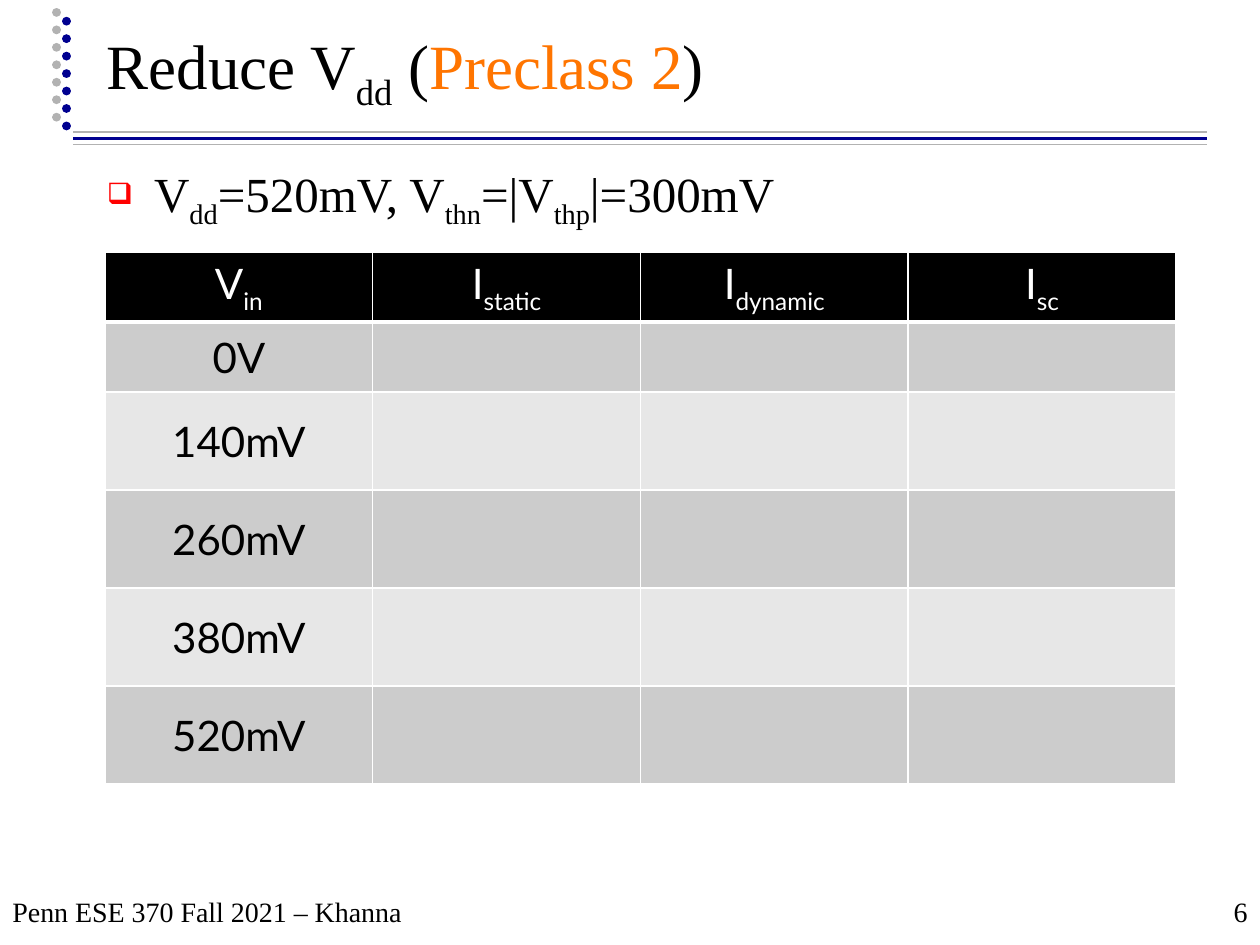
from lxml.etree import SubElement
from pptx import Presentation
from pptx.dml.color import RGBColor
from pptx.enum.dml import MSO_LINE
from pptx.enum.shapes import MSO_CONNECTOR
from pptx.enum.text import MSO_ANCHOR, PP_ALIGN
from pptx.oxml.ns import qn
from pptx.util import Pt

BLACK = RGBColor(0x00, 0x00, 0x00)
WHITE = RGBColor(0xFF, 0xFF, 0xFF)
NAVY = RGBColor(0x00, 0x00, 0x90)
GRAY = RGBColor(0xB2, 0xB2, 0xB2)
ORANGE = RGBColor(0xFF, 0x75, 0x00)
RED = RGBColor(0xFF, 0x00, 0x00)
DARK_BAND = RGBColor(0xCC, 0xCC, 0xCC)
LIGHT_BAND = RGBColor(0xE7, 0xE7, 0xE7)

SERIF = "Times New Roman"
SANS = "Lato"
SUBSCRIPT = "-25000"

HEADERS = ["in", "static", "dynamic", "sc"]
INPUTS = ["0V", "140mV", "260mV", "380mV", "520mV"]
ROW_HEIGHTS = [40, 40, 56, 56, 56, 56]


def write_text(frame, runs, size, font=SERIF, color=BLACK, align=None):
    paragraph = frame.paragraphs[0]
    if align is not None:
        paragraph.alignment = align
    for text, style in runs:
        run = paragraph.add_run()
        run.text = text
        run.font.size = Pt(size)
        run.font.name = font
        run.font.color.rgb = style if isinstance(style, RGBColor) else color
        if style == SUBSCRIPT:
            run._r.get_or_add_rPr().set("baseline", SUBSCRIPT)
    return paragraph


def add_text(slide, runs, left, top, width, height, anchor=MSO_ANCHOR.BOTTOM, **text_format):
    box = slide.shapes.add_textbox(Pt(left), Pt(top), Pt(width), Pt(height))
    box.text_frame.word_wrap = True
    box.text_frame.vertical_anchor = anchor
    return write_text(box.text_frame, runs, **text_format)


def add_line(slide, start, end, color, width, dotted=False):
    connector = slide.shapes.add_connector(
        MSO_CONNECTOR.STRAIGHT, *[Pt(value) for value in (*start, *end)]
    )
    connector.line.color.rgb = color
    connector.line.width = Pt(width)
    if dotted:
        connector.line.dash_style = MSO_LINE.ROUND_DOT
        connector.line._get_or_add_ln().set("cap", "rnd")
    SubElement(connector._element.spPr, qn("a:effectLst"))


def add_bullet(paragraph, character, color, percent):
    properties = paragraph._p.get_or_add_pPr()
    properties.set("marL", str(Pt(27)))
    properties.set("indent", str(-Pt(27)))
    bullet_color = SubElement(properties, qn("a:buClr"))
    SubElement(bullet_color, qn("a:srgbClr"), val=str(color))
    SubElement(properties, qn("a:buSzPct"), val=str(percent * 1000))
    SubElement(properties, qn("a:buChar"), char=character)


def add_borders(cell, bottom):
    properties = cell._tc.get_or_add_tcPr()
    for side, width in (("L", 1), ("R", 1), ("T", 1), ("B", bottom)):
        line = SubElement(properties, qn(f"a:ln{side}"), w=str(Pt(width)))
        fill = SubElement(line, qn("a:solidFill"))
        SubElement(fill, qn("a:srgbClr"), val=str(WHITE))


def fill_cell(cell, runs, fill, color=BLACK, bottom=1):
    add_borders(cell, bottom)
    cell.fill.solid()
    cell.fill.fore_color.rgb = fill
    cell.vertical_anchor = MSO_ANCHOR.MIDDLE
    write_text(cell.text_frame, runs, size=24, font=SANS, color=color, align=PP_ALIGN.CENTER)


def add_current_table(slide):
    table = slide.shapes.add_table(
        len(ROW_HEIGHTS), len(HEADERS), Pt(60), Pt(144), Pt(612), Pt(sum(ROW_HEIGHTS))
    ).table
    for row, height in zip(table.rows, ROW_HEIGHTS):
        row.height = Pt(height)
    for column, name in enumerate(HEADERS):
        symbol = "I" if column else "V"
        runs = [(symbol, None), (name, SUBSCRIPT)]
        fill_cell(table.cell(0, column), runs, BLACK, color=WHITE, bottom=3)
    for row, voltage in enumerate(INPUTS, start=1):
        band = DARK_BAND if row % 2 else LIGHT_BAND
        for column in range(len(HEADERS)):
            runs = [] if column else [(voltage, None)]
            fill_cell(table.cell(row, column), runs, band)


def add_decoration(slide):
    for y, color, width in ((79.2, NAVY, 2), (82.6, GRAY, 1), (75.6, GRAY, 1)):
        add_line(slide, (42, y), (690, y), color, width)
    for x, bottom, color in ((32.4, 67, GRAY), (38, 72, NAVY)):
        add_line(slide, (x, bottom), (x, bottom - 66), color, 5, dotted=True)


def main():
    presentation = Presentation()
    presentation.slide_width = Pt(720)
    presentation.slide_height = Pt(540)
    slide = presentation.slides.add_slide(presentation.slide_layouts[6])

    add_decoration(slide)
    title = [("Reduce V", None), ("dd", SUBSCRIPT), (" (", None), ("Preclass 2", ORANGE), (")", None)]
    add_text(slide, title, 54, 8, 613.5, 60, size=36)
    conditions = [
        ("V", None), ("dd", SUBSCRIPT), ("=520mV, V", None), ("thn", SUBSCRIPT),
        ("=|V", None), ("thp", SUBSCRIPT), ("|=300mV", None),
    ]
    body = add_text(slide, conditions, 54, 90, 612, 396, anchor=MSO_ANCHOR.TOP, size=28)
    add_bullet(body, "❑", RED, 60)
    add_current_table(slide)
    add_text(slide, [("Penn ESE 370 Fall 2021 – Khanna", None)], 0, 498, 390, 36, size=16)
    add_text(slide, [("6", None)], 570, 498, 150, 36, size=16, align=PP_ALIGN.RIGHT)

    presentation.save("out.pptx")


if __name__ == "__main__":
    main()
